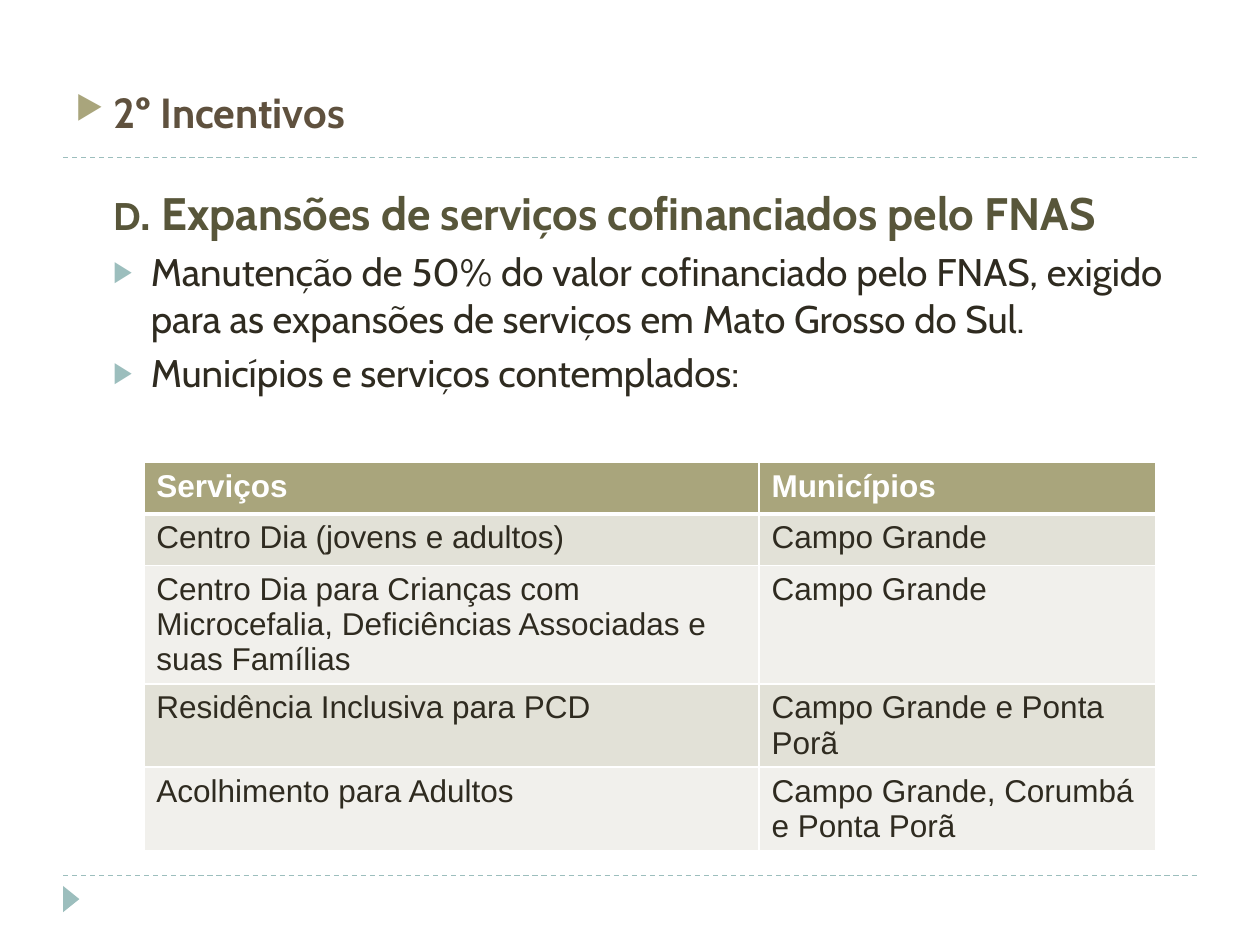
from dataclasses import dataclass
from typing import Optional

from lxml import etree
from pptx import Presentation
from pptx import util as u
from pptx.dml.color import RGBColor
from pptx.enum import dml, shapes, text
from pptx.oxml.ns import qn

OLIVE, TEAL, INK, WHITE = "A9A57C", "9CBEBD", "2F2B20", "FFFFFF"
BROWN, MOSS = "5F513E", "58563A"
BANDS = ("E2E1D7", "F1F0EC")


@dataclass
class Run:
    words: str
    size: float
    color: str
    bold: bool = False
    font: str = "Cabin"


@dataclass
class Item:
    runs: list[Run]
    margin: float
    hanging: float = 0
    bullet: Optional[str] = None
    before: float = 0


def rgb(code: str) -> RGBColor:
    return RGBColor.from_string(code)


def child(parent, tag: str, **attributes: str):
    return etree.SubElement(parent, qn(tag), **attributes)


def write_run(paragraph, run: Run) -> None:
    piece = paragraph.add_run()
    piece.text = run.words
    formats = {"name": run.font, "size": u.Pt(run.size), "bold": run.bold}
    for key, value in formats.items():
        setattr(piece.font, key, value)
    piece.font.color.rgb = rgb(run.color)


def write_item(paragraph, item: Item) -> None:
    formats = {"alignment": text.PP_ALIGN.JUSTIFY, "line_spacing": 1.0,
               "space_before": u.Pt(item.before), "space_after": u.Pt(0)}
    for key, value in formats.items():
        setattr(paragraph, key, value)
    props = paragraph._p.get_or_add_pPr()
    props.set("marL", str(u.Cm(item.margin)))
    props.set("indent", str(-u.Cm(item.hanging)))
    if item.bullet:
        child(child(props, "a:buClr"), "a:srgbClr", val=item.bullet)
        child(props, "a:buSzPct", val="76000")
        child(props, "a:buChar", char="▶")
    else:
        child(props, "a:buNone")
    for run in item.runs:
        write_run(paragraph, run)


def fill_placeholder(holder, box: tuple, items: list[Item]) -> None:
    for key, value in zip(("left", "top", "width", "height"), box):
        setattr(holder, key, u.Cm(value))
    frame = holder.text_frame
    formats = {"margin_left": 0, "margin_right": 0, "margin_top": 0,
               "margin_bottom": 0, "word_wrap": True,
               "vertical_anchor": text.MSO_ANCHOR.TOP,
               "auto_size": text.MSO_AUTO_SIZE.NONE}
    for key, value in formats.items():
        setattr(frame, key, value)
    for index, item in enumerate(items):
        write_item(frame.add_paragraph() if index else frame.paragraphs[0], item)


def draw_rule(slide, y: float) -> None:
    rule = slide.shapes.add_connector(
        shapes.MSO_CONNECTOR.STRAIGHT, u.Cm(1.27), u.Cm(y), u.Cm(24.13), u.Cm(y))
    rule.line.color.rgb = rgb(TEAL)
    rule.line.width = u.Pt(0.75)
    rule.line.dash_style = dml.MSO_LINE.DASH
    child(rule._element.spPr, "a:effectLst")


def style_cell(cell, run: Run, fill: str, edges: dict[str, float]) -> None:
    props = cell._tc.get_or_add_tcPr()
    for side, width in edges.items():
        edge = child(props, f"a:ln{side}", w=str(u.Pt(width)))
        child(child(edge, "a:solidFill"), "a:srgbClr", val=WHITE)
    cell.fill.solid()
    cell.fill.fore_color.rgb = rgb(fill)
    write_run(cell.text_frame.paragraphs[0], run)


def draw_table(slide, rows: list[tuple[str, str]]) -> None:
    widths, row_height = (12.4, 8), 1.04
    table = slide.shapes.add_table(
        len(rows), len(widths), u.Cm(2.9), u.Cm(9.32),
        u.Cm(sum(widths)), u.Cm(row_height * len(rows))).table
    for column, width in zip(table.columns, widths):
        column.width = u.Cm(width)
    for r, row in enumerate(rows):
        header = r == 0
        fill = OLIVE if header else BANDS[(r - 1) % 2]
        edges = {"L": 1, "R": 1, "T": 3 if r == 1 else 1, "B": 3 if header else 1}
        for c, words in enumerate(row):
            run = Run(words, 18, WHITE if header else INK, header, "Arial")
            style_cell(table.cell(r, c), run, fill, edges)


def main() -> None:
    deck = Presentation()
    deck.slide_width, deck.slide_height = u.Cm(25.4), u.Cm(19.05)
    slide = deck.slides.add_slide(deck.slide_layouts[1])

    # Rules and corner marker
    for y in (17.65, 3.18):
        draw_rule(slide, y)
    marker = slide.shapes.add_shape(
        shapes.MSO_SHAPE.ISOSCELES_TRIANGLE,
        u.Cm(1.17), u.Cm(17.96), u.Cm(0.53), u.Cm(0.33))
    marker.rotation = 90
    marker.shadow.inherit = False
    marker.fill.solid()
    marker.fill.fore_color.rgb = rgb(TEAL)
    marker.line.fill.background()

    # Title and list
    step = 0.76
    fill_placeholder(slide.shapes.title, (1.52, 1.75, 21.92, 1.2), [
        Item([Run("2º Incentivos", 24, BROWN, True)], step, step, OLIVE)])
    points = ("Manutenção de 50% do valor cofinanciado pelo FNAS, exigido "
              "para as expansões de serviços em Mato Grosso do Sul.",
              "Municípios e serviços contemplados:")
    heading = Item([Run("D", 22, MOSS, True),
                    Run(". Expansões de serviços cofinanciados pelo FNAS",
                        26, MOSS, True)], step)
    fill_placeholder(slide.placeholders[1], (1.52, 3.73, 21.92, 4.9), [heading] + [
        Item([Run(point, 22, INK)], 2 * step, step, TEAL, 5) for point in points])

    # Services by municipality
    draw_table(slide, [
        ("Serviços", "Municípios"),
        ("Centro Dia (jovens e adultos)", "Campo Grande"),
        ("Centro Dia para Crianças com Microcefalia, Deficiências Associadas "
         "e suas Famílias", "Campo Grande"),
        ("Residência Inclusiva para PCD", "Campo Grande e Ponta Porã"),
        ("Acolhimento para Adultos", "Campo Grande, Corumbá e Ponta Porã"),
    ])
    deck.save("out.pptx")


if __name__ == "__main__":
    main()
